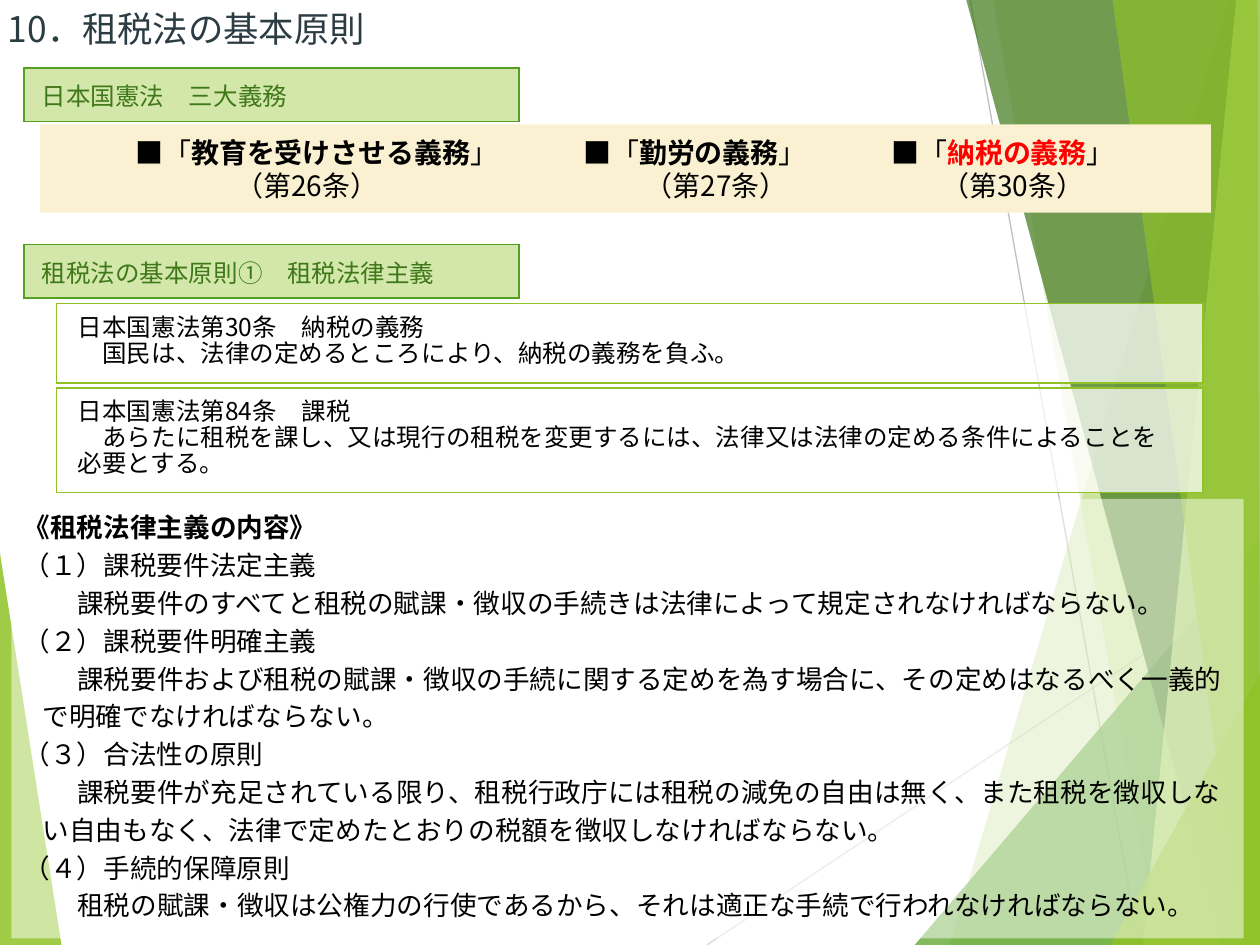
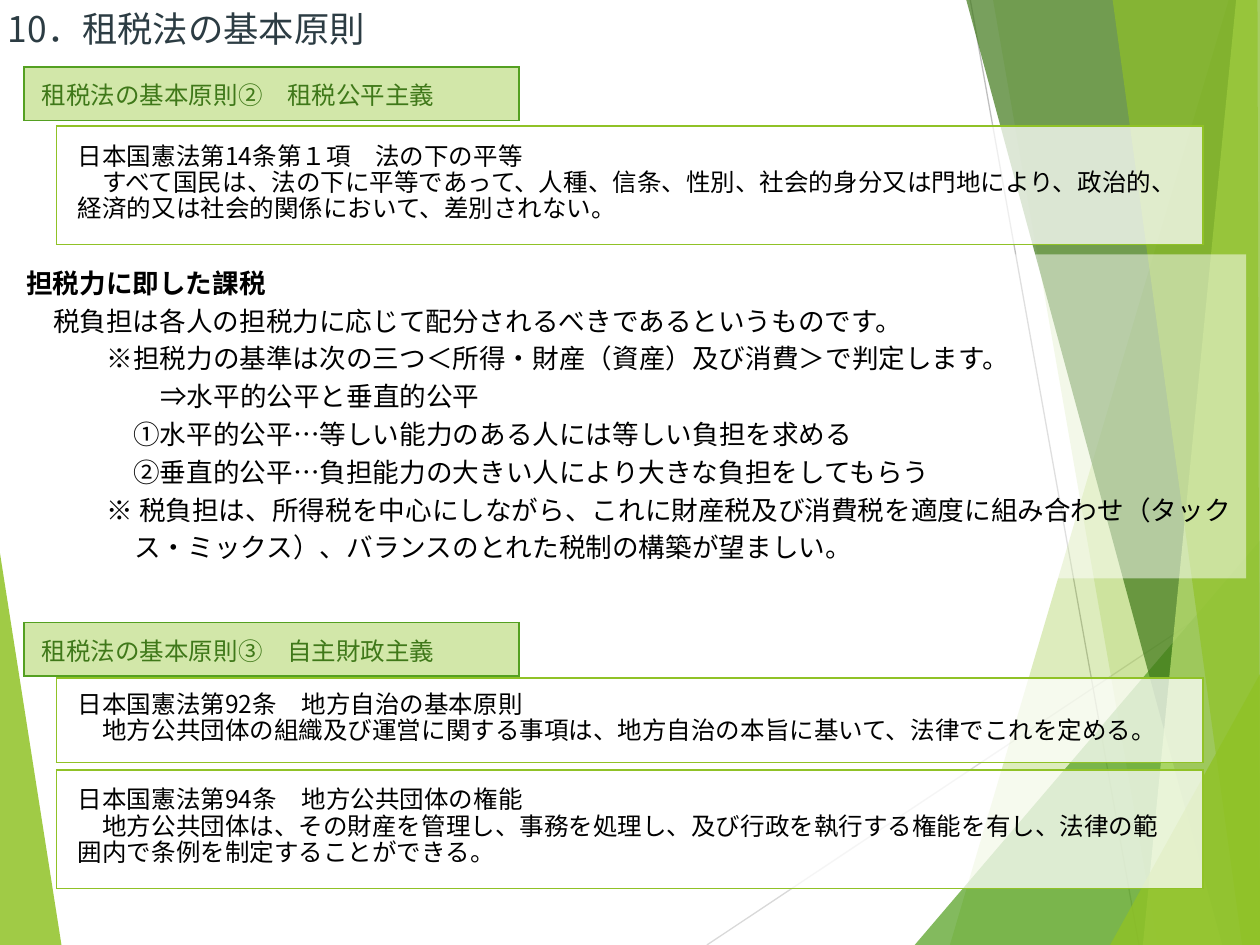
from lxml import etree
from pptx import Presentation
from pptx.dml.color import RGBColor
from pptx.enum.shapes import MSO_CONNECTOR, MSO_SHAPE, PP_PLACEHOLDER
from pptx.enum.text import MSO_ANCHOR, MSO_AUTO_SIZE, PP_ALIGN
from pptx.oxml.ns import qn
from pptx.util import Cm, Pt

RECT = MSO_SHAPE.RECTANGLE
STRAIGHT = MSO_CONNECTOR.STRAIGHT
TITLE = PP_PLACEHOLDER.TITLE
TOP, MIDDLE = MSO_ANCHOR.TOP, MSO_ANCHOR.MIDDLE
NO_FIT = MSO_AUTO_SIZE.NONE
LEFT = PP_ALIGN.LEFT

FONT = "Noto Sans CJK JP"
BLACK, WHITE, RED, SLATE = "000000", "FFFFFF", "FF0000", "2C3C43"
LIME, GREEN, FOREST = "90C226", "54A021", "3F7819"
PALE_LIME, LABEL_FILL, CREAM = "C0E474", "D2E7A9", "FAF1D2"
BODY_EM = 0.54
PAGE_W, PAGE_H = 25.4, 19.05

HEADING = "10．租税法の基本原則"

RAYS = [
    ("D9D9D9", (14.25, PAGE_H), (25.43, 11.61)),
    ("BFBFBF", (19.56, 0), (22.96, PAGE_H)),
]
FACETS = [
    (LIME, 85, [(0, 11.15), (1.24, PAGE_H), (0, PAGE_H)]),
    (LIME, 30, [(24.77, 0), (19.15, PAGE_H), (PAGE_W, PAGE_H), (PAGE_W, 0)]),
    (LIME, 20, [(20.02, 0), (23.34, PAGE_H), (PAGE_W, PAGE_H), (PAGE_W, 0)]),
    (GREEN, 72, [(18.44, PAGE_H), (PAGE_W, 10.9), (PAGE_W, PAGE_H)]),
    (FOREST, 70, [(19.48, 0), (24.64, PAGE_H), (PAGE_W, PAGE_H), (PAGE_W, 0)]),
    (PALE_LIME, 70, [(24.92, 0), (23.04, PAGE_H), (PAGE_W, PAGE_H), (PAGE_W, 0)]),
    (LIME, 65, [(22.43, 0), (25.04, PAGE_H), (PAGE_W, PAGE_H), (25.35, 0)]),
    (LIME, 80, [(22.38, PAGE_H), (PAGE_W, 13.59), (PAGE_W, PAGE_H)]),
]

DUTIES = [
    ("教育を受けさせる義務", BLACK, "（第26条）"),
    ("勤労の義務", BLACK, "（第27条）"),
    ("納税の義務", RED, "（第30条）"),
]
DUTY_TABS = (1.72, 10.75, 16.96)
CLAUSE_TABS = (3.74, 11.99, 17.97)

LEGALITY = [
    ("《租税法律主義の内容》", 0, 0),
    ("（１）課税要件法定主義", 0, 0),
    ("課税要件のすべてと租税の賦課・徴収の手続きは法律によって規定されなければならない。", 2, 0),
    ("（２）課税要件明確主義", 0, 0),
    ("課税要件および租税の賦課・徴収の手続に関する定めを為す場合に、その定めはなるべく一義的で"
     "明確でなければならない。", 2, 0.38),
    ("（３）合法性の原則", 0, 0),
    ("課税要件が充足されている限り、租税行政庁には租税の減免の自由は無く、また租税を徴収しない"
     "自由もなく、法律で定めたとおりの税額を徴収しなければならない。", 2, 0.38),
    ("（４）手続的保障原則", 0, 0),
    ("租税の賦課・徴収は公権力の行使であるから、それは適正な手続で行われなければならない。", 2, 0),
]
FAIRNESS = [
    ("担税力に即した課税", 0, 0),
    ("税負担は各人の担税力に応じて配分されるべきであるというものです。", 1, 0),
    ("※担税力の基準は次の三つ＜所得・財産（資産）及び消費＞で判定します。", 3, 0),
    ("⇒水平的公平と垂直的公平", 5, 0),
    ("①水平的公平…等しい能力のある人には等しい負担を求める", 4, 0),
    ("②垂直的公平…負担能力の大きい人により大きな負担をしてもらう", 4, 0),
    ("※ 税負担は、所得税を中心にしながら、これに財産税及び消費税を適度に組み合わせ（タックス・"
     "ミックス）、バランスのとれた税制の構築が望ましい。", 3, 2.18),
]

SLIDES = [
    {
        "labels": [(1.37, "日本国憲法　三大義務"), (4.93, "租税法の基本原則①　租税法律主義")],
        "articles": [
            (6.12, 1.6, "日本国憲法第30条　納税の義務",
             "　国民は、法律の定めるところにより、納税の義務を負ふ。"),
            (7.82, 2.11, "日本国憲法第84条　課税",
             "　あらたに租税を課し、又は現行の租税を変更するには、法律又は法律の定める条件による"
             "ことを必要とする。"),
        ],
        "body": (0.23, 10.06, 8.86, LEGALITY),
        "duties": DUTIES,
    },
    {
        "labels": [(1.35, "租税法の基本原則②　租税公平主義"), (12.55, "租税法の基本原則③　自主財政主義")],
        "articles": [
            (2.54, 2.39, "日本国憲法第14条第１項　法の下の平等",
             "　すべて国民は、法の下に平等であって、人種、信条、性別、社会的身分又は門地により、"
             "政治的、経済的又は社会的関係において、差別されない。"),
            (13.67, 1.7, "日本国憲法第92条　地方自治の基本原則",
             "　地方公共団体の組織及び運営に関する事項は、地方自治の本旨に基いて、法律でこれを定める。"),
            (15.52, 2.39, "日本国憲法第94条　地方公共団体の権能",
             "　地方公共団体は、その財産を管理し、事務を処理し、及び行政を執行する権能を有し、"
             "法律の範囲内で条例を制定することができる。"),
        ],
        "body": (0.28, 5.13, 6.53, FAIRNESS),
        "duties": [],
    },
]


def rgb(color):
    return RGBColor.from_string(color)


def sub(parent, tag, **attrs):
    return etree.SubElement(parent, qn(tag), attrs)


def paint(obj, element, color, alpha=100):
    obj.fill.solid()
    obj.fill.fore_color.rgb = rgb(color)
    if alpha < 100:
        sub(next(element.iter(qn("a:srgbClr"))), "a:alpha", val=str(alpha * 1000))


def add_text(p, text, size=14, color=BLACK, bold=False):
    r = p.add_run()
    r.text = text
    r.font.size = Pt(size)
    r.font.bold = bold
    r.font.color.rgb = rgb(color)
    r.font.name = FONT
    sub(r.font._element, "a:ea", typeface=FONT)


def next_paragraph(tf, spacing=None):
    p = tf.add_paragraph() if tf.paragraphs[0].runs else tf.paragraphs[0]
    p.alignment = LEFT
    if spacing:
        p.line_spacing = Pt(spacing)
    return p


def set_margins(obj, x, y):
    obj.margin_left = obj.margin_right = Cm(x)
    obj.margin_top = obj.margin_bottom = Cm(y)


def add_facets(s):
    group = s.shapes.add_group_shape()
    facets = []
    for color, alpha, points in FACETS:
        corners = [(Cm(x), Cm(y)) for x, y in points]
        builder = group.shapes.build_freeform(*corners[0], scale=1.0)
        builder.add_line_segments(corners[1:], close=True)
        sp = builder.convert_to_shape()
        sp.shadow.inherit = False
        sp.line.fill.background()
        paint(sp, sp.element, color, alpha)
        facets.append(sp)
    for color, start, end in RAYS:
        line = group.shapes.add_connector(STRAIGHT, *map(Cm, start + end))
        line.line.color.rgb = rgb(color)
        line.line.width = Pt(0.75)
        sub(line.element.spPr, "a:effectLst")
    for sp in facets[1:]:
        group.element.append(sp.element)
    return group


def add_title(s):
    sp = s.shapes.title
    sp.left, sp.top, sp.width, sp.height = Cm(0), Cm(0), Cm(10.16), Cm(1.14)
    tf = sp.text_frame
    tf.auto_size = NO_FIT
    tf.vertical_anchor = MIDDLE
    set_margins(tf, 0, 0)
    tf.margin_left = Cm(0.16)
    add_text(next_paragraph(tf), HEADING, size=20.2, color=SLATE)


def add_frame(s, box, fill, alpha, border, anchor, margins):
    frame = s.shapes.add_table(1, 1, *map(Cm, box))
    table = frame.table
    table.first_row = table.horz_banding = False
    cell = table.cell(0, 0)
    paint(cell, frame.element, fill, alpha)
    cell.vertical_anchor = anchor
    set_margins(cell, *margins)
    tc_pr = next(frame.element.iter(qn("a:tcPr")))
    for i, side in enumerate("LRTB"):
        ln = etree.Element(qn("a:ln" + side), w=str(Pt(1)))
        sub(sub(ln, "a:solidFill"), "a:srgbClr", val=border)
        tc_pr.insert(i, ln)
    return cell.text_frame


def add_label(s, top, text):
    tf = add_frame(s, (0.48, top, 9.98, 1.02), LABEL_FILL, 100, GREEN, TOP, (0.36, 0.18))
    add_text(next_paragraph(tf), text, color=FOREST)


def add_article(s, top, height, *lines):
    tf = add_frame(s, (1.14, top, 23.11, height), WHITE, 75, LIME, MIDDLE, (0.43, 0.15))
    for text in lines:
        add_text(next_paragraph(tf, spacing=15), text)


def add_panel(s, box, fill, alpha, anchor, margins):
    sp = s.shapes.add_shape(RECT, *map(Cm, box))
    sp.shadow.inherit = False
    sp.line.fill.background()
    paint(sp, sp.element, fill, alpha)
    tf = sp.text_frame
    tf.word_wrap = True
    tf.vertical_anchor = anchor
    set_margins(tf, *margins)
    return tf


def add_body(s, left, top, height, lines):
    tf = add_panel(s, (left, top, 24.84, height), WHITE, 50, TOP, (0.25, 0.13))
    for i, (text, first_ems, hang) in enumerate(lines):
        p = next_paragraph(tf, spacing=21.6)
        p_pr = p._p.get_or_add_pPr()
        p_pr.set("marL", str(Cm(hang)))
        p_pr.set("indent", str(Cm(first_ems * BODY_EM - hang)))
        add_text(p, text, size=15.2, bold=i == 0)


def add_tabs(p, stops):
    tabs = sub(p._p.get_or_add_pPr(), "a:tabLst")
    for stop in stops:
        sub(tabs, "a:tab", pos=str(Cm(stop)), algn="l")


def add_duties(s, duties):
    tf = add_panel(s, (0.81, 2.51, 23.6, 1.78), CREAM, 100, MIDDLE, (0.2, 0.03))
    p = next_paragraph(tf)
    add_tabs(p, DUTY_TABS)
    for duty, color, _ in duties:
        add_text(p, "\t■「", size=16)
        add_text(p, duty, size=16, color=color, bold=True)
        add_text(p, "」", size=16)
    p = next_paragraph(tf)
    add_tabs(p, CLAUSE_TABS)
    for _, _, clause in duties:
        add_text(p, "\t" + clause, size=16)


def main():
    prs = Presentation()
    prs.slide_width, prs.slide_height = Cm(PAGE_W), Cm(PAGE_H)
    layout = prs.slide_layouts[5]
    for ph in list(layout.placeholders):
        if ph.placeholder_format.type != TITLE:
            ph.element.getparent().remove(ph.element)
    for i, content in enumerate(SLIDES):
        s = prs.slides.add_slide(layout)
        if i == 0:
            layout.shapes.element.append(add_facets(s).element)
        add_title(s)
        for article in content["articles"]:
            add_article(s, *article)
        add_body(s, *content["body"])
        for label in content["labels"]:
            add_label(s, *label)
        if content["duties"]:
            add_duties(s, content["duties"])
    prs.save("out.pptx")


if __name__ == "__main__":
    main()
